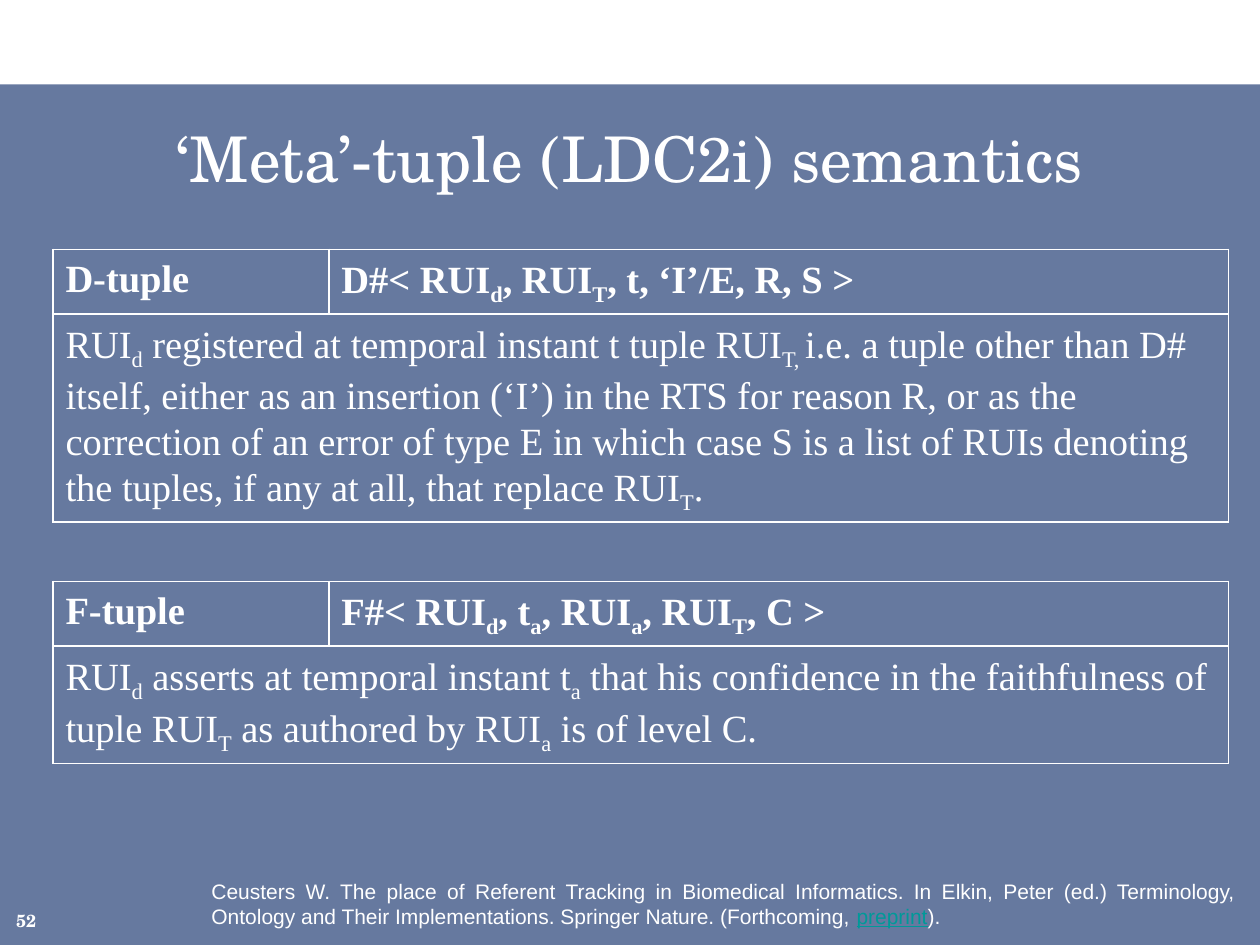
"""Build the slide on the semantics of D-tuples and F-tuples."""
from dataclasses import dataclass

from lxml import etree
from pptx import Presentation
from pptx.dml.color import RGBColor
from pptx.enum.shapes import MSO_SHAPE
from pptx.enum.text import MSO_ANCHOR, PP_ALIGN
from pptx.oxml.ns import qn
from pptx.util import Inches, Pt

WHITE = RGBColor(0xFF, 0xFF, 0xFF)
NAVY = RGBColor(0x00, 0x20, 0x60)
TEAL = RGBColor(0x00, 0x99, 0x99)
RECTANGLE = MSO_SHAPE.RECTANGLE
MIDDLE = MSO_ANCHOR.MIDDLE
CENTER, LEFT, JUSTIFY = PP_ALIGN.CENTER, PP_ALIGN.LEFT, PP_ALIGN.JUSTIFY
TITLE_FONT, TABLE_FONT, NOTE_FONT = "TeX Gyre Schola", "Times New Roman", "Arial"
TITLE_ONLY = 5
COLUMN_WIDTHS = (2.19, 7.14)
ROW_HEIGHTS = (0.51, 1.65, 0.47, 0.51, 0.93)


@dataclass(frozen=True)
class TupleEntry:
    """A tuple type whose texts alternate between normal and subscript."""
    first_row: int
    name: str
    form: tuple[str, ...]
    meaning: tuple[str, ...]


ENTRIES = (
    TupleEntry(
        0, "D-tuple",
        ("D#< RUI", "d", ", RUI", "T", ", t, ‘I’/E, R, S >"),
        ("RUI", "d", " registered at temporal instant t tuple RUI", "T, ",
         "i.e. a tuple other than D# itself, either as an insertion (‘I’) in the RTS "
         "for reason R, or as the correction of an error of type E in which case S is "
         "a list of RUIs denoting the tuples, if any at all, that replace RUI", "T", "."),
    ),
    TupleEntry(
        3, "F-tuple",
        ("F#< RUI", "d", ", t", "a", ", RUI", "a", ", RUI", "T", ", C >"),
        ("RUI", "d", " asserts at temporal instant t", "a",
         " that his confidence in the faithfulness of tuple RUI", "T",
         " as authored by RUI", "a", " is of level C."),
    ),
)


def add_run(paragraph, text: str, font_name: str, size: float,
            color: RGBColor = WHITE, bold: bool = False):
    """Append a formatted run and return it."""
    run = paragraph.add_run()
    run.text = text
    run.font.name = font_name
    run.font.size = Pt(size)
    run.font.bold = bold
    run.font.color.rgb = color
    return run


def add_text_box(slide, left: float, top: float, width: float, height: float):
    """Add a wrapping text box and return its first paragraph."""
    frame = slide.shapes.add_textbox(
        Inches(left), Inches(top), Inches(width), Inches(height)).text_frame
    frame.word_wrap = True
    return frame.paragraphs[0]


def fill_cell(cell, pieces: tuple[str, ...], bold: bool) -> None:
    """Write pieces into a cell, lowering every second one."""
    paragraph = cell.text_frame.paragraphs[0]
    paragraph.alignment = LEFT
    paragraph.line_spacing = 1.07
    paragraph.space_after = Pt(8)
    for index, piece in enumerate(pieces):
        run = add_run(paragraph, piece, TABLE_FONT, 22, bold=bold)
        if index % 2:
            run.font._element.set("baseline", "-25000")


def style_cell(cell, visible_sides: str) -> None:
    """Draw white borders on the given sides and clear the fill."""
    properties = cell._tc.get_or_add_tcPr()
    for side in "LRTB":
        line = etree.SubElement(properties, qn(f"a:ln{side}"), w=str(Pt(1)))
        if side in visible_sides:
            solid = etree.SubElement(line, qn("a:solidFill"))
            etree.SubElement(solid, qn("a:srgbClr"), val=str(WHITE))
        else:
            etree.SubElement(line, qn("a:noFill"))
    cell.fill.background()


def add_background(slide) -> None:
    """Lay the translucent panel behind everything else."""
    panel = slide.shapes.add_shape(
        RECTANGLE, 0, Inches(0.67), Inches(10), Inches(6.83))
    panel.shadow.inherit = False
    panel.line.fill.background()
    panel.fill.solid()
    panel.fill.fore_color.rgb = NAVY
    color = panel._element.spPr.find(f".//{qn('a:srgbClr')}")
    etree.SubElement(color, qn("a:alpha"), val="60000")
    slide.shapes._spTree.insert(2, panel._element)


def add_title(slide) -> None:
    """Place and format the title."""
    title = slide.shapes.title
    title.left, title.top = Inches(0.25), Inches(0.83)
    title.width, title.height = Inches(9.5), Inches(0.83)
    title.text_frame.vertical_anchor = MIDDLE
    paragraph = title.text_frame.paragraphs[0]
    paragraph.alignment = CENTER
    add_run(paragraph, "‘Meta’-tuple (LDC2i) semantics", TITLE_FONT, 36)


def add_tuple_table(slide) -> None:
    """Add the table with a heading and a merged meaning row per tuple."""
    table = slide.shapes.add_table(
        len(ROW_HEIGHTS), len(COLUMN_WIDTHS), Inches(0.42), Inches(1.98),
        Inches(sum(COLUMN_WIDTHS)), Inches(sum(ROW_HEIGHTS))).table
    for column, width in zip(table.columns, COLUMN_WIDTHS):
        column.width = Inches(width)
    gap_row = 2
    for index, height in enumerate(ROW_HEIGHTS):
        table.rows[index].height = Inches(height)
        for cell in table.rows[index].cells:
            style_cell(cell, "TB" if index == gap_row else "LRTB")
    for entry in ENTRIES:
        fill_cell(table.cell(entry.first_row, 0), (entry.name,), True)
        fill_cell(table.cell(entry.first_row, 1), entry.form, True)
        meaning = table.cell(entry.first_row + 1, 0)
        meaning.merge(table.cell(entry.first_row + 1, 1))
        fill_cell(meaning, entry.meaning, False)


def add_citation(slide) -> None:
    """Add the reference at the foot of the slide."""
    paragraph = add_text_box(slide, 1.58, 6.92, 8.33, 0.5)
    paragraph.alignment = JUSTIFY
    add_run(paragraph, "Ceusters W. The place of Referent Tracking in Biomedical "
            "Informatics. In Elkin, Peter (ed.) Terminology, Ontology and Their "
            "Implementations. Springer Nature. (Forthcoming, ", NOTE_FONT, 12)
    add_run(paragraph, "preprint", NOTE_FONT, 12, TEAL).font.underline = True
    add_run(paragraph, ").", NOTE_FONT, 12)


def main() -> None:
    """Create and save the presentation."""
    presentation = Presentation()
    presentation.slide_width, presentation.slide_height = Inches(10), Inches(7.5)
    slide = presentation.slides.add_slide(presentation.slide_layouts[TITLE_ONLY])
    add_background(slide)
    add_title(slide)
    add_tuple_table(slide)
    add_citation(slide)
    number = add_text_box(slide, 0.03, 7.17, 0.39, 0.25)
    add_run(number, "52", TITLE_FONT, 10, bold=True)
    presentation.save("out.pptx")


if __name__ == "__main__":
    main()
